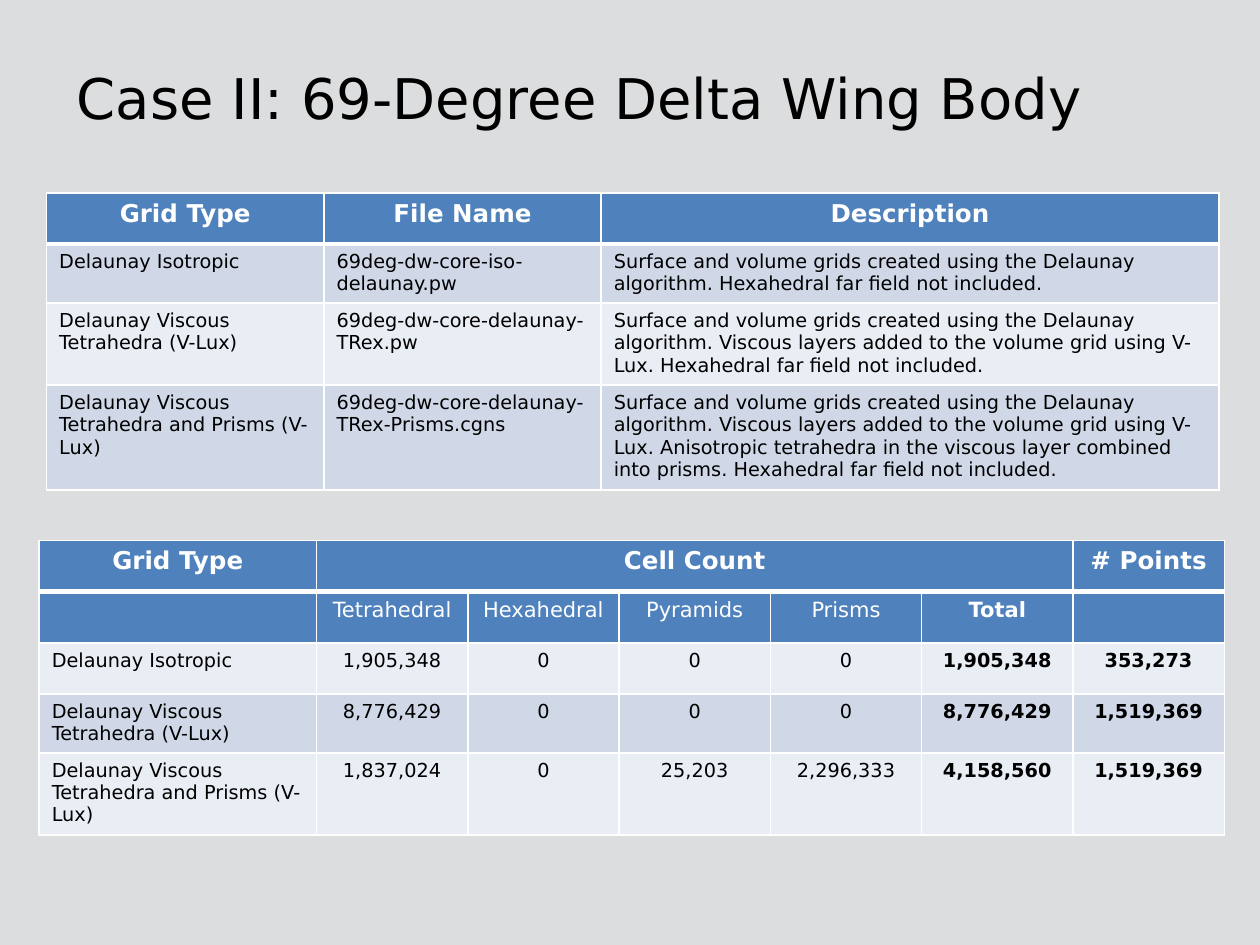
from dataclasses import dataclass

from lxml import etree
from pptx import Presentation
from pptx.dml.color import RGBColor
from pptx.enum.text import MSO_ANCHOR, PP_ALIGN
from pptx.oxml.ns import qn
from pptx.util import Cm, Pt

CENTER, LEFT = PP_ALIGN.CENTER, PP_ALIGN.LEFT
MIDDLE = MSO_ANCHOR.MIDDLE
FONT = "DejaVu Sans"
ROW_HEIGHT = 1.03
COLORS = {
    "background": "DCDDDE",
    "header": "4F81BD",
    "odd_row": "D0D8E8",
    "even_row": "E9EDF4",
    "light": "FFFFFF",
    "dark": "000000",
}

ISOTROPIC = "Delaunay Isotropic"
VISCOUS = "Delaunay Viscous\nTetrahedra (V-Lux)"
PRISMS = "Delaunay Viscous\nTetrahedra and Prisms (V-Lux)"
CREATED = "Surface and volume grids created using the Delaunay algorithm. "
LAYERS = "Viscous layers added to the volume grid using V-Lux. "
COMBINED = "Anisotropic tetrahedra in the viscous layer combined into prisms. "
NO_FAR_FIELD = "Hexahedral far field not included."


@dataclass
class GridTable:
    left: float
    top: float
    widths: list[float]
    rows: list[list[str]]
    header_rows: int = 1
    centered_from: int = 99
    bold_from: int = 99
    header_span: tuple[int, int] | None = None


DESCRIPTIONS = GridTable(
    left=0.94, top=3.89, widths=[5.59, 5.59, 12.45],
    rows=[
        ["Grid Type", "File Name", "Description"],
        [ISOTROPIC, "69deg-dw-core-iso-delaunay.pw", CREATED + NO_FAR_FIELD],
        [VISCOUS, "69deg-dw-core-delaunay-TRex.pw", CREATED + LAYERS + NO_FAR_FIELD],
        [PRISMS, "69deg-dw-core-delaunay-TRex-Prisms.cgns",
         CREATED + LAYERS + COMBINED + NO_FAR_FIELD],
    ],
)
CELL_COUNTS = GridTable(
    left=0.79, top=10.9, widths=[5.59] + [3.05] * 6,
    rows=[
        ["Grid Type", "Cell Count", "", "", "", "", "# Points"],
        ["", "Tetrahedral", "Hexahedral", "Pyramids", "Prisms", "Total", ""],
        [ISOTROPIC, "1,905,348", "0", "0", "0", "1,905,348", "353,273"],
        [VISCOUS, "8,776,429", "0", "0", "0", "8,776,429", "1,519,369"],
        [PRISMS, "1,837,024", "0", "25,203", "2,296,333", "4,158,560", "1,519,369"],
    ],
    header_rows=2, centered_from=1, bold_from=5, header_span=(1, 5),
)


def write_text(frame, text: str, size: float, color: str, bold: bool, align) -> None:
    """Write one paragraph per line of text, each as a single run."""
    for index, line in enumerate(text.split("\n")):
        paragraph = frame.add_paragraph() if index else frame.paragraphs[0]
        paragraph.alignment = align
        run = paragraph.add_run()
        run.text = line
        run.font.name = FONT
        run.font.size = Pt(size)
        run.font.bold = bold
        run.font.color.rgb = RGBColor.from_string(COLORS[color])


def set_borders(cell, row: int) -> None:
    """Give a cell white borders, with a heavy rule under the first row."""
    properties = cell._tc.get_or_add_tcPr()
    heavy_side = {0: "lnB", 1: "lnT"}.get(row)
    for side in ("lnL", "lnR", "lnT", "lnB"):
        width = Pt(3 if side == heavy_side else 1)
        line = etree.SubElement(properties, qn(f"a:{side}"), w=str(width))
        fill = etree.SubElement(line, qn("a:solidFill"))
        etree.SubElement(fill, qn("a:srgbClr"), val=COLORS["light"])


def draw_table(slide, grid: GridTable) -> None:
    """Draw one table with its header and banded body rows."""
    table = slide.shapes.add_table(
        len(grid.rows), len(grid.widths), Cm(grid.left), Cm(grid.top),
        Cm(sum(grid.widths)), Cm(ROW_HEIGHT * len(grid.rows)),
    ).table
    for column, width in zip(table.columns, grid.widths):
        column.width = Cm(width)
    for r, texts in enumerate(grid.rows):
        table.rows[r].height = Cm(ROW_HEIGHT)
        is_header = r < grid.header_rows
        band = "header" if is_header else "odd_row" if r % 2 else "even_row"
        size = (14 if r == 0 else 12) if is_header else 11
        for c, text in enumerate(texts):
            cell = table.cell(r, c)
            set_borders(cell, r)
            cell.fill.solid()
            cell.fill.fore_color.rgb = RGBColor.from_string(COLORS[band])
            if text:
                write_text(
                    cell.text_frame, text, size, "light" if is_header else "dark",
                    r == 0 or c >= grid.bold_from,
                    CENTER if is_header or c >= grid.centered_from else LEFT,
                )
    if grid.header_span:
        first, last = grid.header_span
        table.cell(0, first).merge(table.cell(0, last))


def main() -> None:
    """Build the slide and save it."""
    deck = Presentation()
    deck.slide_width, deck.slide_height = Cm(25.4), Cm(19.05)
    slide = deck.slides.add_slide(deck.slide_layouts[6])
    slide.background.fill.solid()
    slide.background.fill.fore_color.rgb = RGBColor.from_string(COLORS["background"])
    title = slide.shapes.add_textbox(Cm(1.3), Cm(0.64), Cm(22.86), Cm(2.62)).text_frame
    title.word_wrap = True
    title.vertical_anchor = MIDDLE
    write_text(title, "Case II: 69-Degree Delta Wing Body", 32, "dark", False, LEFT)
    for grid in (CELL_COUNTS, DESCRIPTIONS):
        draw_table(slide, grid)
    deck.save("out.pptx")


if __name__ == "__main__":
    main()
